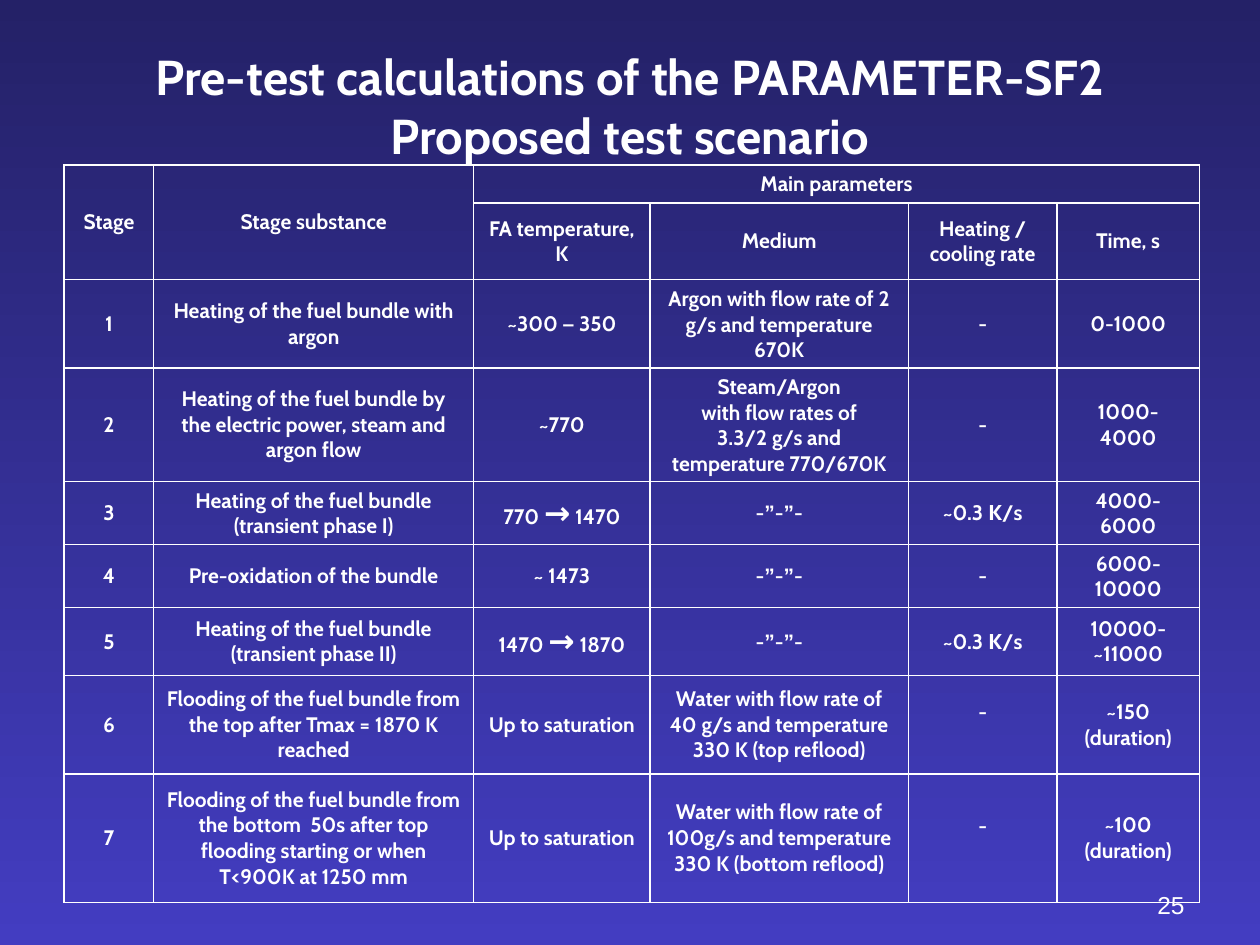
from itertools import groupby

from lxml.etree import SubElement
from pptx import Presentation
from pptx.dml.color import RGBColor
from pptx.enum.text import MSO_ANCHOR as Anchor, PP_ALIGN as Align
from pptx.oxml.ns import qn
from pptx.util import Inches, Pt

WHITE = "FFFFFF"
DITTO = "-”-”-"
COLS = [0.71, 2.54, 1.4, 2.05, 1.18, 1.13]
ROWS = [0.24, 0.61, 0.62, 0.55, 0.44, 0.41, 0.54, 0.78, 1.02]
HEADS = [
    ["Stage", "Stage substance", "Main parameters", "", "", ""],
    ["", "", "FA temperature, K", "Medium", "Heating / cooling rate", "Time, s"],
]
STAGES = [
    ["Heating of the fuel bundle with argon", "~300 – 350",
     "Argon with flow rate of 2 g/s and temperature 670K", "-", "0-1000"],
    ["Heating of the fuel bundle by the electric power, steam and argon flow", "~770",
     "Steam/Argon\nwith flow rates of\n3.3/2 g/s and temperature 770/670K",
     "-", "1000-4000"],
    ["Heating of the fuel bundle\n(transient phase I)", "770 → 1470",
     DITTO, "~0.3 К/s", "4000-6000"],
    ["Pre-oxidation of the bundle", "~ 1473", DITTO, "-", "6000-10000"],
    ["Heating of the fuel bundle\n(transient phase II)", "1470 → 1870",
     DITTO, "~0.3 К/s", "10000- ~11000"],
    ["Flooding of the fuel bundle from the top after Tmax = 1870 K reached",
     "Up to saturation",
     "Water with flow rate of 40 g/s and temperature 330 K (top reflood)",
     "-", "~150\n(duration)"],
    ["Flooding of the fuel bundle from the bottom  50s after top flooding "
     "starting or when T<900K at 1250 mm", "Up to saturation",
     "Water with flow rate of 100g/s and temperature 330 K (bottom reflood)",
     "-", "~100\n(duration)"],
]


def rgb(code):
    return RGBColor.from_string(code)


def kind(char):
    """Sort characters into runs: breaks, arrows, Arial marks, the rest."""
    return {"\v": "break", "→": "arrow", "–": "mark", "”": "mark"}.get(char, "text")


def write(frame, text, size=12, font="Cabin", color=WHITE, bold=True,
          align=Align.CENTER):
    for i, line in enumerate(text.split("\n")):
        para = frame.add_paragraph() if i else frame.paragraphs[0]
        para.alignment = align
        for sort, chars in groupby(line, kind):
            if sort == "break":
                para.add_line_break()
                continue
            run = para.add_run()
            run.text = "".join(chars)
            run.font.size = Pt(18 if sort == "arrow" else size)
            run.font.name = "Arial" if sort == "mark" else font
            run.font.bold = bold
            run.font.color.rgb = rgb(color)


class Deck:
    def __init__(self, width, height):
        self.show = Presentation()
        self.show.slide_width = Inches(width)
        self.show.slide_height = Inches(height)
        self.slide = self.show.slides.add_slide(self.show.slide_layouts[6])

    def back(self, top, base):
        fill = self.slide.background.fill
        fill.gradient()
        fill.gradient_angle = 270
        for stop, code, place in zip(fill.gradient_stops, (top, base), (0, 1)):
            stop.color.rgb = rgb(code)
            stop.position = place

    def text(self, box, text, anchor, **style):
        frame = self.slide.shapes.add_textbox(*map(Inches, box)).text_frame
        frame.word_wrap = True
        frame.vertical_anchor = anchor
        write(frame, text, **style)

    def border(self, cell, color=WHITE, width=1):
        props = cell._tc.get_or_add_tcPr()
        for side in ("lnL", "lnR", "lnT", "lnB"):
            line = SubElement(props, qn(f"a:{side}"), w=str(Pt(width)))
            fill = SubElement(line, qn("a:solidFill"))
            SubElement(fill, qn("a:srgbClr"), val=color)

    def table(self, left, top, cols, rows, data, spans):
        size = map(Inches, (left, top, sum(cols), sum(rows)))
        grid = self.slide.shapes.add_table(len(rows), len(cols), *size).table
        grid.first_row = grid.horz_banding = False
        for col, width in zip(grid.columns, cols):
            col.width = Inches(width)
        for row, height, texts in zip(grid.rows, rows, data):
            row.height = Inches(height)
            for cell, text in zip(row.cells, texts):
                self.border(cell)
                cell.fill.background()
                cell.vertical_anchor = Anchor.MIDDLE
                write(cell.text_frame, text)
        for first, last in spans:
            grid.cell(*first).merge(grid.cell(*last))
        return grid


def main():
    deck = Deck(10, 7.5)
    deck.back("242167", "433DC1")

    # Page number and title
    deck.text((7.17, 6.83, 2.33, 0.52), "25", Anchor.BOTTOM,
              size=14, font="Arial", bold=False, align=Align.RIGHT)
    deck.text((0.5, 0.42, 9, 0.83),
              "Pre-test calculations of the PARAMETER-SF2\vProposed test scenario",
              Anchor.MIDDLE, size=28)

    # Test scenario
    data = HEADS + [[str(i), *stage] for i, stage in enumerate(STAGES, 1)]
    spans = [((0, 0), (1, 0)), ((0, 1), (1, 1)), ((0, 2), (0, 5))]
    grid = deck.table(0.51, 1.31, COLS, ROWS, data, spans)

    # The rate dashes of both flooding stages sit above the middle
    for row in (7, 8):
        grid.cell(row, 4).margin_bottom = Inches(0.25)

    deck.show.save("out.pptx")


if __name__ == "__main__":
    main()
